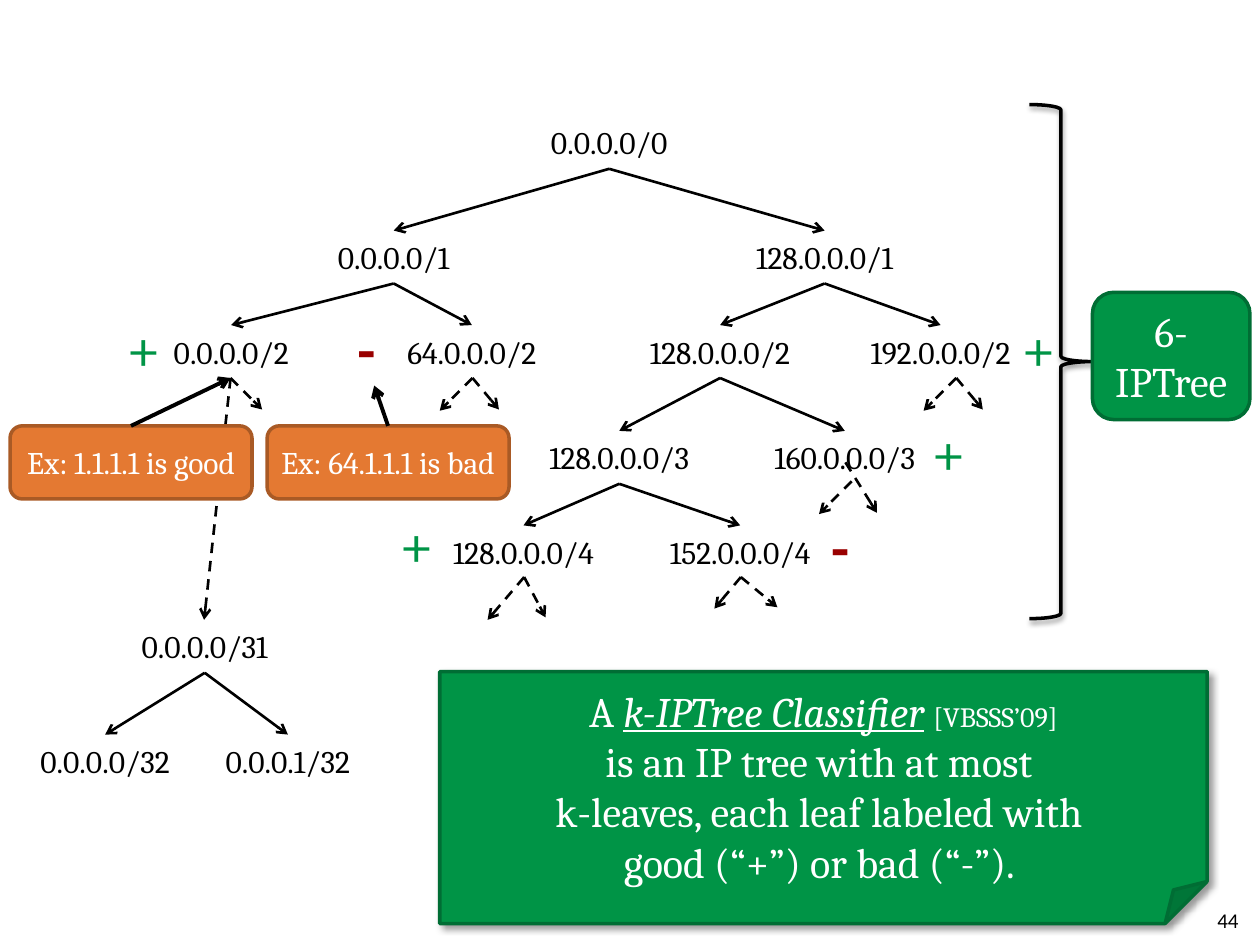
import pptx
import pptx.util
import pptx.dml.color
import pptx.enum.dml
import pptx.enum.shapes
import pptx.enum.text
import pptx.oxml
import pptx.oxml.ns
import pptx.oxml.xmlchemy

Inches = pptx.util.Inches
Pt = pptx.util.Pt
Shape = pptx.enum.shapes.MSO_SHAPE
Align = pptx.enum.text.PP_ALIGN
Anchor = pptx.enum.text.MSO_ANCHOR
qn = pptx.oxml.ns.qn

HUES = {
    "black": "000000", "white": "FFFFFF", "green": "009446", "pine": "006D34",
    "red": "990000", "orange": "E47932", "brown": "A95A25",
}
WIDE, HIGH = 1.33, 0.42
NODES = {
    "0.0.0.0/0": (4.17, 0.92),
    "0.0.0.0/1": (2.46, 1.83), "128.0.0.0/1": (5.88, 1.83),
    "0.0.0.0/2": (1.17, 2.58), "64.0.0.0/2": (3.08, 2.58),
    "128.0.0.0/2": (5.05, 2.58), "192.0.0.0/2": (6.8, 2.58),
    "128.0.0.0/3": (4.25, 3.42), "160.0.0.0/3": (6.04, 3.42),
    "128.0.0.0/4": (3.49, 4.17), "152.0.0.0/4": (5.21, 4.17),
    "0.0.0.0/31": (0.96, 4.92),
    "0.0.0.0/32": (0.17, 5.83), "0.0.0.1/32": (1.62, 5.83),
}
SOLID = ("0.0.0.0/2", "64.0.0.0/2")
EDGES = {
    "0.0.0.0/0": ("0.0.0.0/1", "128.0.0.0/1"),
    "0.0.0.0/1": ("0.0.0.0/2", "64.0.0.0/2"),
    "128.0.0.0/1": ("128.0.0.0/2", "192.0.0.0/2"),
    "128.0.0.0/2": ("128.0.0.0/3", "160.0.0.0/3"),
    "128.0.0.0/3": ("128.0.0.0/4", "152.0.0.0/4"),
    "0.0.0.0/31": ("0.0.0.0/32", "0.0.0.1/32"),
}
STUBS = {
    (1.83, 3): [(1.62, 4.92), (2.08, 3.25)],
    (3.75, 3): [(3.49, 3.26), (3.96, 3.25)],
    (7.59, 3): [(7.33, 3.26), (7.8, 3.25)],
    (4.16, 4.58): [(3.87, 4.92), (4.33, 4.9)],
    (5.88, 4.58): [(5.67, 4.83), (6.17, 4.82)],
    (6.76, 3.82): [(6.5, 4.08)],
    (6.71, 3.67): [(6.96, 4.07)],
}
SIGNS = [
    ("+", 1, 2.45), ("-", 2.83, 2.45), ("+", 3.17, 4),
    ("-", 6.59, 4.02), ("+", 7.39, 3.27), ("+", 8.11, 2.45),
]
NOTES = [
    ("Ex: 64.1.1.1 is bad", 2.12, (2.97, 3.06)),
    ("Ex: 1.1.1.1 is good", 0.08, (1.83, 3)),
]


def color(name):
    return pptx.dml.color.RGBColor.from_string(HUES[name])


def style(font, size, hue, face="Cambria"):
    font.size, font.name = Pt(size), face
    font.color.rgb = color(hue)


def setup(shape, align=Align.CENTER, anchor=Anchor.MIDDLE, pads=(0, 0, 0, 0)):
    frame = shape.text_frame
    frame.word_wrap = True
    frame.vertical_anchor = anchor
    (frame.margin_left, frame.margin_top,
     frame.margin_right, frame.margin_bottom) = map(Inches, pads)
    para = frame.paragraphs[0]
    para.alignment = align
    return para


def add_box(slide, kind, box, fill=None, line=None):
    shape = slide.shapes.add_shape(kind, *map(Inches, box))
    shape.shadow.inherit = False
    if fill:
        shape.fill.solid()
        shape.fill.fore_color.rgb = color(fill)
    else:
        shape.fill.background()
    if line:
        shape.line.color.rgb = color(line)
        shape.line.width = Pt(2)
    else:
        shape.line.fill.background()
    return shape


def add_label(slide, text, box, size, hue, fill=None, line=None):
    shape = add_box(slide, Shape.ROUNDED_RECTANGLE, box, fill, line)
    para = setup(shape)
    para.text = text
    style(para.font, size, hue)


def add_shade(shape, alpha, blur, dist, angle):
    effects = shape._element.spPr.find(qn("a:effectLst"))
    effects.append(pptx.oxml.parse_xml(
        f'<a:outerShdw {pptx.oxml.ns.nsdecls("a")} blurRad="{Pt(blur)}" '
        f'dist="{Pt(dist)}" dir="{angle * 60000}" rotWithShape="0">'
        f'<a:srgbClr val="{HUES["black"]}"><a:alpha val="{alpha * 1000}"/>'
        '</a:srgbClr></a:outerShdw>'))


def add_arrow(slide, start, end, width=1.5, dash=False):
    kind = pptx.enum.shapes.MSO_CONNECTOR.STRAIGHT
    arrow = slide.shapes.add_connector(kind, *map(Inches, (*start, *end)))
    arrow.line.color.rgb = color("black")
    arrow.line.width = Pt(width)
    if dash:
        arrow.line.dash_style = pptx.enum.dml.MSO_LINE.DASH
    props = arrow._element.spPr
    tail = pptx.oxml.xmlchemy.OxmlElement("a:tailEnd")
    tail.set("type", "arrow")
    props.find(qn("a:ln")).append(tail)
    props.append(pptx.oxml.xmlchemy.OxmlElement("a:effectLst"))


def add_text(slide, text, box, size, hue, align, anchor, face="Cambria"):
    shape = slide.shapes.add_textbox(*map(Inches, box))
    para = setup(shape, align, anchor)
    para.text = text
    style(para.font, size, hue, face)
    return para


def add_tree(slide):
    for text, spot in NODES.items():
        hue = "white" if text in SOLID else None
        add_label(slide, text, (*spot, WIDE, HIGH), 18, "black", hue, hue)
    for parent, kids in EDGES.items():
        left, top = NODES[parent]
        for kid in kids:
            x, y = NODES[kid]
            add_arrow(slide, (left + WIDE / 2, top + HIGH), (x + WIDE / 2, y))
    for start, ends in STUBS.items():
        for end in ends:
            add_arrow(slide, start, end, dash=True)


def add_sign(slide, text, left, top):
    plus = text == "+"
    para = add_text(slide, text, (left, top, 0.28, 0.61), 36,
                    "green" if plus else "red", Align.LEFT, Anchor.TOP)
    para.font.bold = not plus


def add_rule(slide):
    card = add_box(slide, Shape.FOLDED_CORNER, (3.49, 5.33, 6.09, 2), "green", "pine")
    add_shade(card, 40, 4, 3, 45)
    para = setup(card, pads=(0.2, 0.15, 0.2, 0))
    parts = [
        ("A ", 24), ("k-IPTree Classifier", 24), (" ", 24), ("[VBSSS’09]\n", 16),
        ("is an IP tree with at most \nk-leaves, each leaf labeled with \n"
         "good (“+”) or bad (“-”). ", 24),
    ]
    for text, size in parts:
        lines = text.split("\n")
        for index, line in enumerate(lines):
            if index:
                para.add_line_break()
            if line:
                run = para.add_run()
                run.text = line
                style(run.font, size, "white")
                if line.startswith("k-IPTree"):
                    run.font.italic = run.font.underline = True


def main():
    deck = pptx.Presentation()
    deck.slide_width, deck.slide_height = Inches(10), Inches(7.5)
    slide = deck.slides.add_slide(deck.slide_layouts[6])
    add_text(slide, "44", (7.5, 7.1, 2.33, 0.4), 12, "black",
             Align.RIGHT, Anchor.MIDDLE, "Calibri")
    add_tree(slide)
    add_rule(slide)
    brace = add_box(slide, Shape.RIGHT_BRACE, (8.17, 0.83, 0.5, 4.08), line="black")
    add_shade(brace, 38, 3.1, 1.6, 90)
    add_label(slide, "6-IPTree", (8.67, 2.32, 1.25, 1.01), 24, "white", "green", "pine")
    for sign in SIGNS:
        add_sign(slide, *sign)
    for text, left, end in NOTES:
        add_label(slide, text, (left, 3.38, 1.92, 0.58), 18, "white", "orange", "brown")
        add_arrow(slide, (left + 0.96, 3.38), end, 2.25)
    deck.save("out.pptx")


if __name__ == "__main__":
    main()
